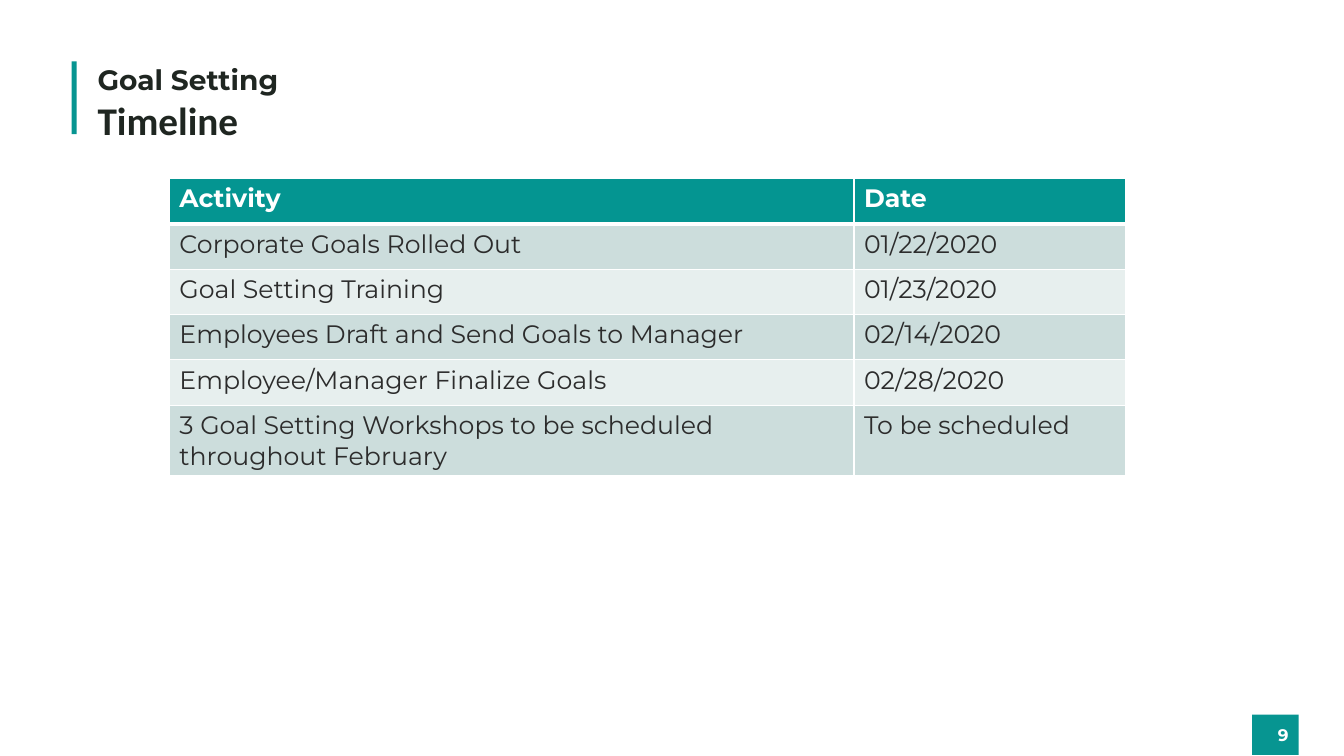
from lxml.etree import SubElement
from pptx import Presentation
from pptx.dml.color import RGBColor
from pptx.enum.shapes import MSO_SHAPE as Shape
from pptx.enum.text import MSO_ANCHOR as Anchor, PP_ALIGN as Align
from pptx.oxml.ns import qn
from pptx.util import Inches, Pt

TEAL = "079591"
HEADER_TEAL = "049591"
BANDS = ("CCDDDC", "E7EFEE")
WHITE = "FFFFFF"
TITLE_INK = "1F2621"
TABLE_INK = "2C2C2C"

TIMELINE = [
    ("Activity", "Date"),
    ("Corporate Goals Rolled Out", "01/22/2020"),
    ("Goal Setting Training", "01/23/2020"),
    ("Employees Draft and Send Goals to Manager", "02/14/2020"),
    ("Employee/Manager Finalize Goals", "02/28/2020"),
    ("3 Goal Setting Workshops to be scheduled throughout February", "To be scheduled"),
]


def color(value):
    return RGBColor.from_string(value)


class SlideBuilder:
    """Draws styled elements on the current slide."""

    def __init__(self, page, font="Montserrat"):
        self.page = page
        self.font = font

    def set_text(self, frame, text, size, ink, bold=True, font=None):
        frame.text = text
        frame.word_wrap = True
        para = frame.paragraphs[0]
        for span in para.runs:
            span.font.name = font or self.font
            span.font.size = Pt(size)
            span.font.bold = bold
            span.font.color.rgb = color(ink)
        return para

    def block(self, left, top, width, height, fill):
        shape = self.page.shapes.add_shape(
            Shape.RECTANGLE, Inches(left), Inches(top), Inches(width), Inches(height))
        shape.shadow.inherit = False
        shape.fill.solid()
        shape.fill.fore_color.rgb = color(fill)
        shape.line.fill.background()
        return shape

    def page_number(self, text, left, top, width, height):
        badge = self.block(left, top, width, height, TEAL)
        badge.text_frame.vertical_anchor = Anchor.MIDDLE
        self.set_text(badge.text_frame, text, 12, WHITE).alignment = Align.RIGHT

    def heading(self, text, left, top, width, height, size,
                font=None, anchor=Anchor.TOP, before=0):
        box = self.page.shapes.add_textbox(
            Inches(left), Inches(top), Inches(width), Inches(height))
        box.text_frame.vertical_anchor = anchor
        para = self.set_text(box.text_frame, text, size, TITLE_INK, font=font)
        para.line_spacing = 0.9
        para.space_before = Pt(before)

    def border(self, cell, side, width):
        properties = cell._tc.get_or_add_tcPr()
        line = SubElement(properties, qn(f"a:ln{side}"), w=str(Pt(width)))
        fill = SubElement(line, qn("a:solidFill"))
        SubElement(fill, qn("a:srgbClr"), val=WHITE)

    def table(self, rows, left, top, widths, row_height):
        table = self.page.shapes.add_table(
            len(rows), len(widths), Inches(left), Inches(top),
            Inches(sum(widths)), Inches(row_height * len(rows))).table
        for column, width in zip(table.columns, widths):
            column.width = Inches(width)
        for r, texts in enumerate(rows):
            table.rows[r].height = Inches(row_height)
            header = r == 0
            for c, text in enumerate(texts):
                cell = table.cell(r, c)
                for side in "LRTB":
                    heavy = (header and side == "B") or (r == 1 and side == "T")
                    self.border(cell, side, 3 if heavy else 1)
                cell.fill.solid()
                cell.fill.fore_color.rgb = color(HEADER_TEAL if header else BANDS[(r - 1) % 2])
                self.set_text(cell.text_frame, text, 18, WHITE if header else TABLE_INK, header)


def main():
    deck = Presentation()
    deck.slide_width, deck.slide_height = Inches(13.33), Inches(7.5)
    builder = SlideBuilder(deck.slides.add_slide(deck.slide_layouts[6]))
    builder.block(0.71, 0.61, 0.05, 0.72, TEAL)
    builder.page_number("9", 12.42, 7.09, 0.46, 0.4)
    builder.heading("Timeline", 0.87, 0.55, 11.5, 1.33, 28, "Calibri", Anchor.MIDDLE)
    builder.heading("Goal Setting", 0.87, 0.61, 11.5, 0.54, 20, before=10)
    builder.table(TIMELINE, 1.68, 1.77, (6.79, 2.69), 0.45)
    deck.save("out.pptx")


if __name__ == "__main__":
    main()
